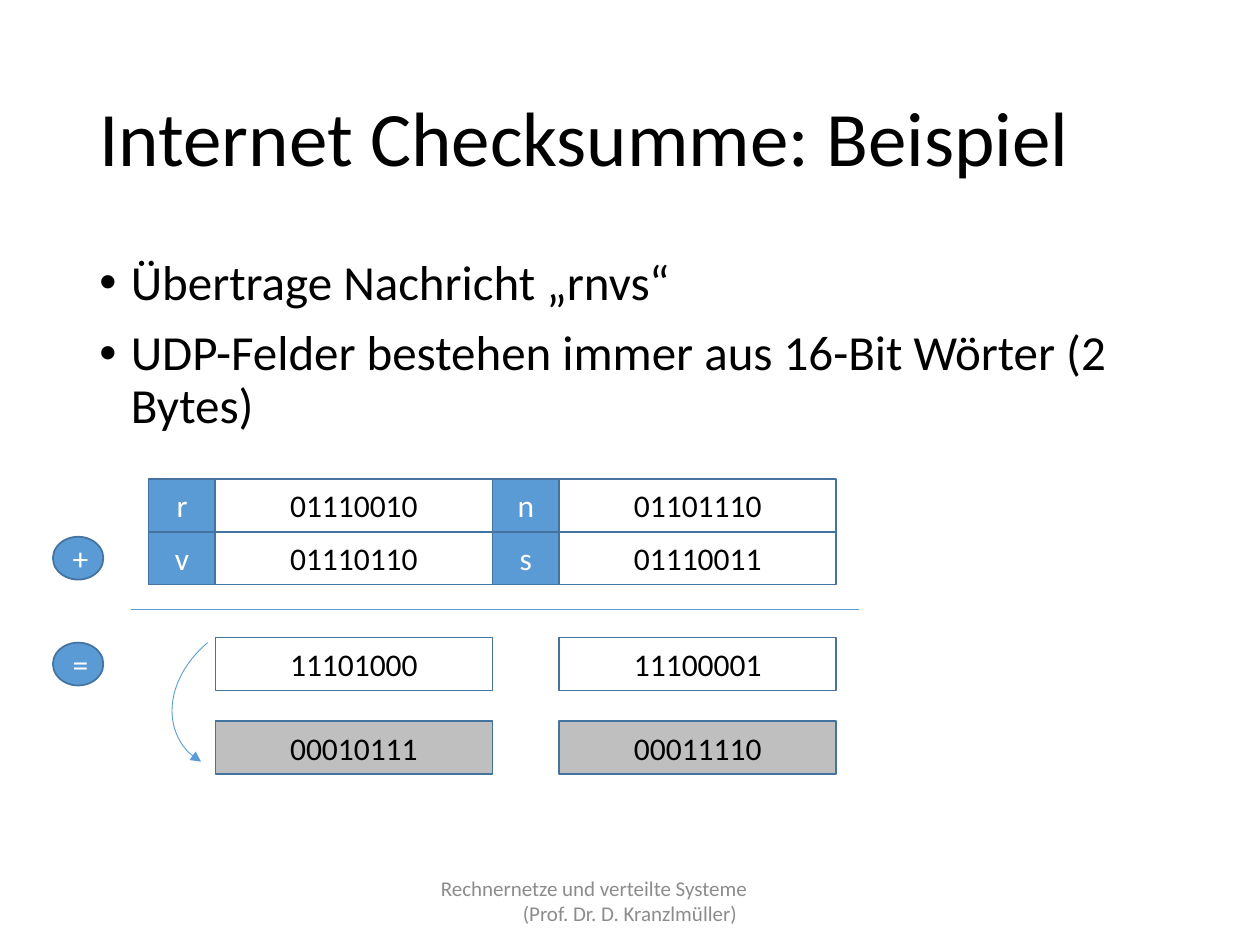
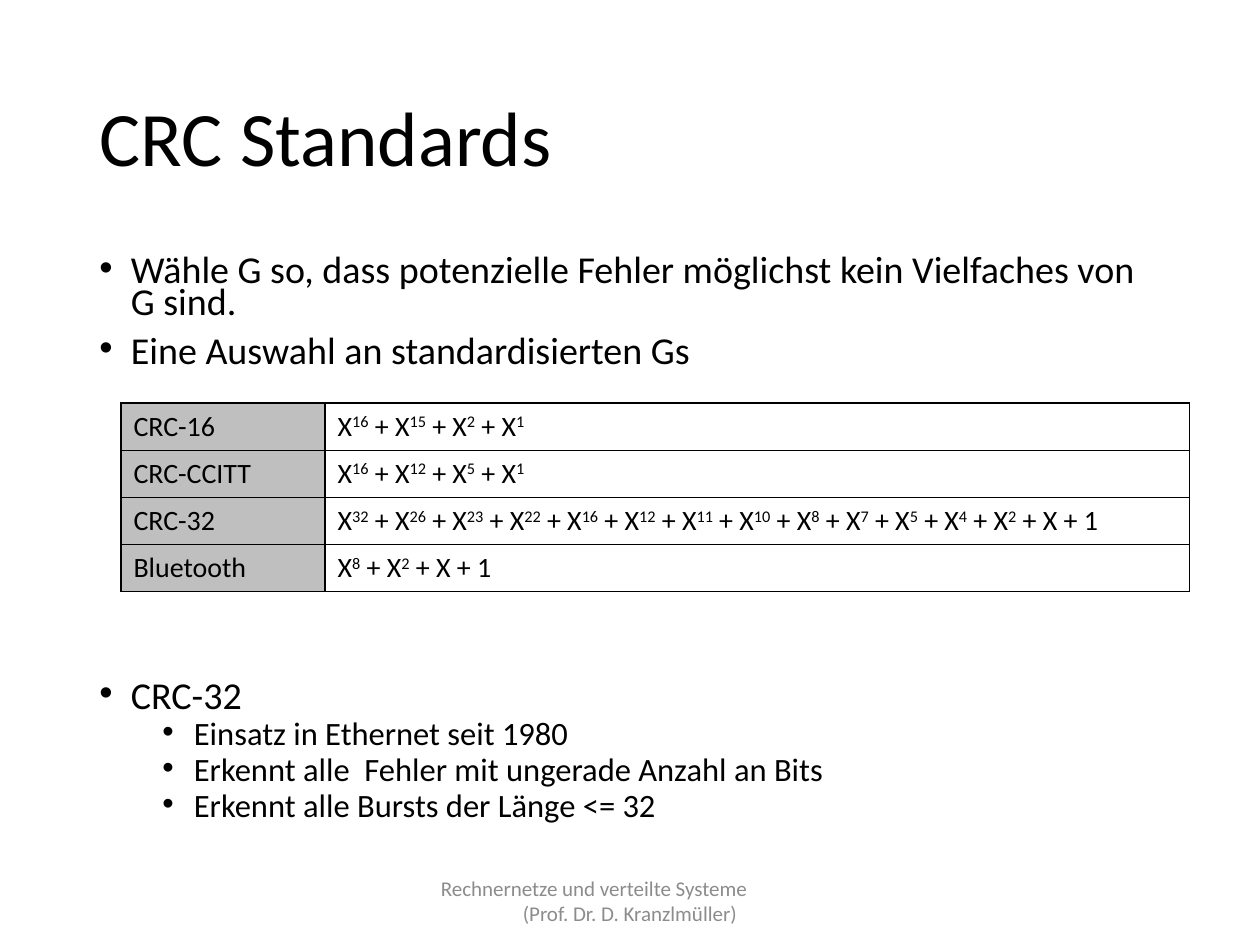
import lxml.etree as etree
import pptx
import pptx.dml.color
import pptx.enum.shapes
import pptx.enum.text
import pptx.oxml.ns
import pptx.util

Pt = pptx.util.Pt
SHAPE = pptx.enum.shapes.MSO_SHAPE
ALIGN = pptx.enum.text.PP_ALIGN
MIDDLE = pptx.enum.text.MSO_ANCHOR.MIDDLE
FIXED = pptx.enum.text.MSO_AUTO_SIZE.NONE

BLACK, WHITE, GREY, MUTED = "000000", "FFFFFF", "BFBFBF", "8C8C8C"
BLUE, EDGE = "5B9BD5", "43739E"

TITLE = (49.68, 28.8, 620.64, 104.4)
BODY = (49.68, 144, 620.64, 342.72)
FOOTER = (238.32, 500.4, 243.36, 28.8)
SUMS = (84.96, 273.6, 393, 168.5)
CODES = (69.12, 230.4, 610.7, 107.8)

# Level: size, left indent, line spacing, space before
BIG = {0: (28, 18, 0.9, 10)}
SMALL = {0: (21.7, 18, 0.7, 9.5), 1: (18.6, 54, 0.7, 4.75)}

POLYS = [
    ("CRC-16", [16, 15, 2, 1], ""),
    ("CRC-CCITT", [16, 12, 5, 1], ""),
    ("CRC-32", [32, 26, 23, 22, 16, 12, 11, 10, 8, 7, 5, 4, 2], " + X + 1"),
    ("Bluetooth", [8, 2], " + X + 1"),
]


def hue(code):
    return pptx.dml.color.RGBColor.from_string(code)


def put(thing, **values):
    """Set each named attribute of thing."""
    for name, value in values.items():
        setattr(thing, name, value)


def pts(*sizes):
    return [Pt(size) for size in sizes]


def add(parent, tag, **attrs):
    """Append an XML child in the drawing namespace."""
    return etree.SubElement(parent, pptx.oxml.ns.qn(tag), attrs)


def write(para, text, size, color=BLACK):
    run = para.add_run()
    run.text = text
    put(run.font, name="Calibri", size=Pt(size))
    run.font.color.rgb = hue(color)
    return run


def stroke(line, color, width):
    line.color.rgb = hue(color)
    line.width = Pt(width)


def paint(fill, color):
    if color:
        fill.solid()
        fill.fore_color.rgb = hue(color)
    else:
        fill.background()


def title(slide, text, box):
    left, top, width, height = pts(*box)
    head = slide.shapes.title
    put(head, left=left, top=top, width=width, height=height)
    put(head.text_frame, word_wrap=True, auto_size=FIXED, vertical_anchor=MIDDLE)
    para = head.text_frame.paragraphs[0]
    put(para, alignment=ALIGN.LEFT, line_spacing=0.9)
    write(para, text, 44)


def lines(slide, box):
    """Add a text box and yield its paragraphs one by one."""
    frame = slide.shapes.add_textbox(*pts(*box)).text_frame
    put(frame, word_wrap=True, auto_size=FIXED)
    yield frame
    yield frame.paragraphs[0]
    while True:
        yield frame.add_paragraph()


def bullets(slide, items, style, box):
    """Items are (level, text) or (level, text, space before)."""
    paras = lines(slide, box)
    next(paras)
    for index, (level, text, *gap) in enumerate(items):
        para = next(paras)
        size, indent, spacing, before = style[level]
        props = para._p.get_or_add_pPr()
        props.set("marL", str(Pt(indent)))
        props.set("indent", str(Pt(-18)))
        add(props, "a:buFont", typeface="Arial")
        add(props, "a:buChar", char="•")
        before = gap[0] if gap else before
        put(para, level=level, line_spacing=spacing,
            space_before=Pt(before if index else 0))
        write(para, text, size)


def footer(slide, box):
    paras = lines(slide, box)
    next(paras).vertical_anchor = MIDDLE
    for text, margin in (("Rechnernetze und verteilte Systeme", 41),
                         ("(Prof. Dr. D. Kranzlmüller)", 0)):
        para = next(paras)
        para._p.get_or_add_pPr().set("marR", str(Pt(margin)))
        para.alignment = ALIGN.CENTER
        write(para, text, 12, MUTED)


def block(slide, kind, text, box, fill, color):
    shape = slide.shapes.add_shape(kind, *pts(*box))
    shape.shadow.inherit = False
    paint(shape.fill, fill)
    stroke(shape.line, EDGE, 1)
    shape.text_frame.vertical_anchor = MIDDLE
    para = shape.text_frame.paragraphs[0]
    para.alignment = ALIGN.CENTER
    write(para, text, 18, color)


def rule(slide, left, right, y):
    line = slide.shapes.add_connector(
        pptx.enum.shapes.MSO_CONNECTOR.STRAIGHT, *pts(left, y, right, y))
    stroke(line.line, BLUE, 0.5)
    add(line._element.spPr, "a:effectLst")


def bend(slide, box):
    """Curved arrow from the sum to its complement."""
    arc = slide.shapes.add_shape(SHAPE.ARC, *pts(*box))
    arc.rotation = 238.9
    arc.adjustments[0], arc.adjustments[1] = 151.04, 207.39
    arc.fill.background()
    stroke(arc.line, BLUE, 0.5)
    add(arc.line._get_or_add_ln(), "a:headEnd", type="triangle")
    arc.shadow.inherit = False


def sums(slide, box):
    """Binary addition with the complement below it."""
    left, top, width, _ = box
    key, tall = 38.16, 30.24
    pitch = width / 2
    rows = [
        (0, "rn", ("01110010", "01101110"), None),
        (tall, "vs", ("01110110", "01110011"), None),
        (3 * tall, "", ("11101000", "11100001"), None),
        (138.5, "", ("00010111", "00011110"), GREY),
    ]
    for down, letters, values, fill in rows:
        for col, value in enumerate(values):
            x, y = left + col * pitch, top + down
            if letters:
                block(slide, SHAPE.RECTANGLE, letters[col], (x, y, key, tall), BLUE, WHITE)
            block(slide, SHAPE.RECTANGLE, value, (x + key, y, pitch - key, tall), fill, BLACK)
    rule(slide, left - 10, left + width + 13, top + 74.9)
    for sign, row in (("+", 1), ("=", 3)):
        oval = (left - 54.7, top + row * tall + 2.9, 28.8, 24.5)
        block(slide, SHAPE.OVAL, sign, oval, BLUE, WHITE)
    bend(slide, (left + 22.3, top + 69.8, 82.1, 105.8))


def border(cell):
    props = cell._tc.get_or_add_tcPr()
    for side in "LRTB":
        edge = add(props, f"a:ln{side}", w=str(Pt(1)))
        add(add(edge, "a:solidFill"), "a:srgbClr", val=BLACK)


def powers(para, exps, tail):
    """Write a polynomial with raised exponents."""
    for index, exp in enumerate(exps):
        write(para, " + X" if index else "X", 16)
        raised = write(para, str(exp), 16)
        raised._r.get_or_add_rPr().set("baseline", "30000")
    if tail:
        write(para, tail, 16)


def codes(slide, box):
    table = slide.shapes.add_table(len(POLYS), 2, *pts(*box)).table
    put(table, first_row=False, horz_banding=False)
    table.columns[0].width, table.columns[1].width = pts(116.7, box[2] - 116.7)
    for row, (name, exps, tail) in zip(table.rows, POLYS):
        row.height = Pt(box[3] / len(POLYS))
        for cell, fill in zip(row.cells, (GREY, None)):
            border(cell)
            paint(cell.fill, fill)
        first, second = (cell.text_frame.paragraphs[0] for cell in row.cells)
        write(first, name, 16)
        powers(second, exps, tail)


def page(deck, text, items, style):
    """Add a slide with title, bullets and footer."""
    slide = deck.slides.add_slide(deck.slide_layouts[5])
    title(slide, text, TITLE)
    bullets(slide, items, style, BODY)
    footer(slide, FOOTER)
    return slide


def main():
    deck = pptx.Presentation()
    put(deck, slide_width=Pt(720), slide_height=Pt(540))
    sums(page(deck, "Internet Checksumme: Beispiel", [
        (0, "Übertrage Nachricht „rnvs“"),
        (0, "UDP-Felder bestehen immer aus 16-Bit Wörter (2 Bytes)"),
    ], BIG), SUMS)
    codes(page(deck, "CRC Standards", [
        (0, "Wähle G so, dass potenzielle Fehler möglichst kein Vielfaches von G sind."),
        (0, "Eine Auswahl an standardisierten Gs"),
        (0, "CRC-32", 179),
        (1, "Einsatz in Ethernet seit 1980"),
        (1, "Erkennt alle  Fehler mit ungerade Anzahl an Bits"),
        (1, "Erkennt alle Bursts der Länge <= 32"),
    ], SMALL), CODES)
    deck.save("out.pptx")


if __name__ == "__main__":
    main()
